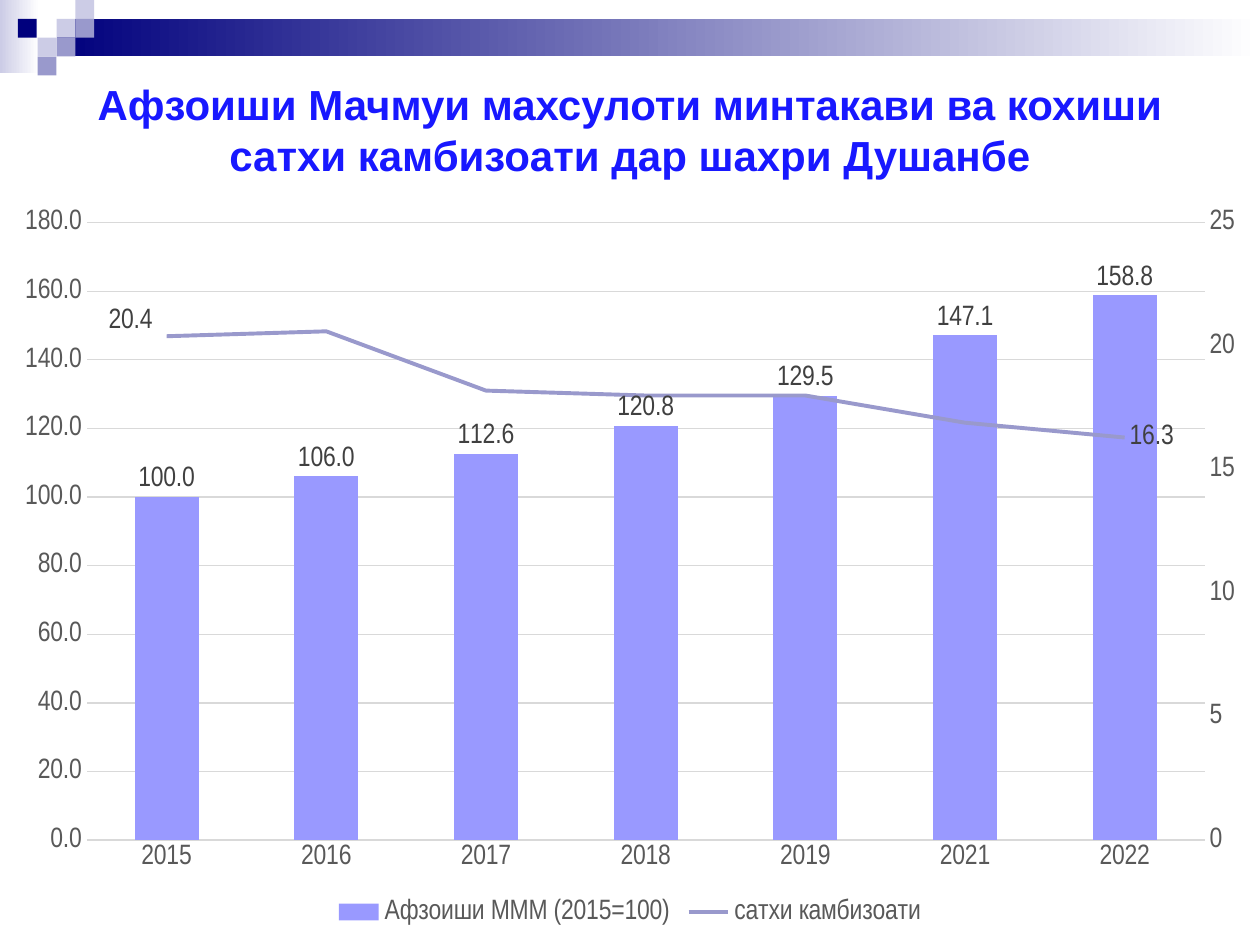
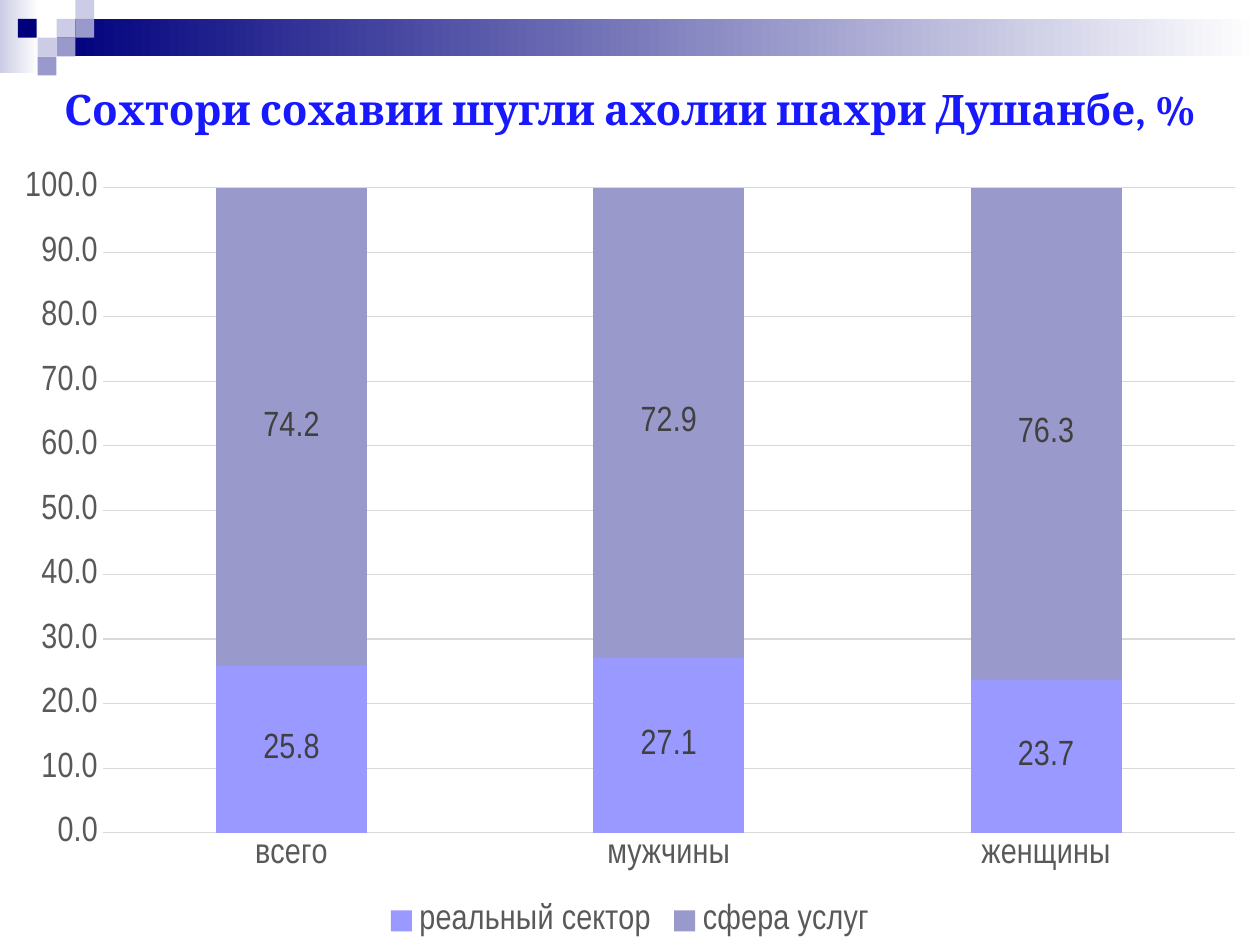
import copy

import pptx
import pptx.chart.axis
import pptx.chart.data
import pptx.dml.color
import pptx.enum.chart
import pptx.enum.shapes
import pptx.enum.text
import pptx.oxml
import pptx.oxml.ns
import pptx.util

Cm = pptx.util.Cm
Pt = pptx.util.Pt
qn = pptx.oxml.ns.qn
ChartType = pptx.enum.chart.XL_CHART_TYPE
LabelPosition = pptx.enum.chart.XL_LABEL_POSITION

COLOURS = {
    "navy": "00007D", "mist": "CCCCE6", "lilac": "9999CC", "violet": "9999FF",
    "white": "FFFFFF", "title": "1818FF", "grid": "D9D9D9",
    "axis": "595959", "label": "404040",
}
CHART_FONT = "Arial Narrow"
SLIDE_WIDTH = 25.4
TILE = 0.38
# Left, top and colour of the small squares, counted in tiles
TILES = [
    (3, 1, "mist"), (4, 0, "mist"), (4, 1, "lilac"), (2, 2, "mist"),
    (0.95, 1, "navy"), (3, 2, "lilac"), (2, 3, "lilac"),
]


def rgb(name):
    return pptx.dml.color.RGBColor.from_string(COLOURS[name])


class Deck:
    def __init__(self):
        self.prs = pptx.Presentation()
        self.prs.slide_width = Cm(SLIDE_WIDTH)
        self.prs.slide_height = Cm(19.05)
        self.slide = None

    def new_slide(self):
        self.slide = self.prs.slides.add_slide(self.prs.slide_layouts[6])
        # Faded bands, then the checkered corner
        self.rect(0, 0, 0.79, 1.47, "mist", "white")
        self.rect(3 * TILE, TILE, SLIDE_WIDTH - 3 * TILE, 2 * TILE, "navy", "white")
        for column, row, colour in TILES:
            self.rect(column * TILE, row * TILE, TILE, TILE, colour)

    def rect(self, left, top, width, height, colour, fade_to=None):
        block = self.slide.shapes.add_shape(
            pptx.enum.shapes.MSO_SHAPE.RECTANGLE,
            Cm(left), Cm(top), Cm(width), Cm(height))
        block.shadow.inherit = False
        block.line.fill.background()
        if fade_to:
            block.fill.gradient()
            block.fill.gradient_angle = 0
            for stop, name in zip(block.fill.gradient_stops, (colour, fade_to)):
                stop.color.rgb = rgb(name)
        else:
            block.fill.solid()
            block.fill.fore_color.rgb = rgb(colour)

    def title(self, text, left, width, height, font):
        frame = self.slide.shapes.add_textbox(
            Cm(left), Cm(1.27), Cm(width), Cm(height)).text_frame
        frame.word_wrap = True
        frame.vertical_anchor = pptx.enum.text.MSO_ANCHOR.MIDDLE
        heading = frame.paragraphs[0]
        heading.alignment = pptx.enum.text.PP_ALIGN.CENTER
        run = heading.add_run()
        run.text = text
        run.font.bold = True
        self.style_font(run.font, 24, "title", font)

    def style_font(self, font, size, colour, name=CHART_FONT):
        font.name = name
        font.size = Pt(size)
        font.color.rgb = rgb(colour)

    def style_line(self, line, colour, width):
        line.color.rgb = rgb(colour)
        line.width = Pt(width)

    def chart(self, kind, top, height, size, categories, series, maximum, step):
        data = pptx.chart.data.CategoryChartData(number_format="General")
        data.categories = categories
        for name, values in series.items():
            data.add_series(name, values)
        chart = self.slide.shapes.add_chart(
            kind, Cm(0), Cm(top), Cm(SLIDE_WIDTH), Cm(height), data).chart
        chart.has_title = False
        self.style_font(chart.font, size, "axis")
        chart.has_legend = True
        chart.legend.position = pptx.enum.chart.XL_LEGEND_POSITION.BOTTOM
        chart.legend.include_in_layout = False
        self.style_font(chart.legend.font, size, "axis")
        # Axes
        for axis in (chart.category_axis, chart.value_axis):
            axis.major_tick_mark = pptx.enum.chart.XL_TICK_MARK.NONE
            axis.minor_tick_mark = pptx.enum.chart.XL_TICK_MARK.NONE
            self.style_font(axis.tick_labels.font, size, "axis")
        self.style_line(chart.category_axis.format.line, "grid", 0.75)
        scale = chart.value_axis
        scale.format.line.fill.background()
        self.style_line(scale.major_gridlines.format.line, "grid", 0.75)
        scale.minimum_scale, scale.maximum_scale, scale.major_unit = 0, maximum, step
        scale.tick_labels.number_format = "0.0"
        scale.tick_labels.number_format_is_linked = False
        chart.plots[0].gap_width = 150
        chart.plots[0].vary_by_categories = False
        return chart

    def columns(self, series, colour, size, position):
        series.format.fill.solid()
        series.format.fill.fore_color.rgb = rgb(colour)
        labels = series.data_labels
        labels.show_value = True
        labels.number_format = "0.0"
        labels.number_format_is_linked = False
        labels.position = position
        self.style_font(labels.font, size, "label")

    def move_to_right_axis(self, chart, maximum, step):
        """Turn the last column series into a line on a second value axis."""
        bars = chart.plots[0]._element
        series = bars.findall(qn("c:ser"))[-1]
        for column_only in series.findall(qn("c:invertIfNegative")):
            series.remove(column_only)
        ids = {axis_id.get("val"): str(9001 + i)
               for i, axis_id in enumerate(bars.findall(qn("c:axId")))}
        line_plot = pptx.oxml.parse_xml(
            f'<c:lineChart {pptx.oxml.ns.nsdecls("c")}>'
            '<c:grouping val="standard"/><c:varyColors val="0"/><c:marker val="1"/>'
            + "".join(f'<c:axId val="{new}"/>' for new in ids.values())
            + "</c:lineChart>")
        line_plot.insert(2, series)
        bars.addnext(line_plot)

        # Second pair of axes: values on the right, categories hidden
        left_axis = chart.value_axis._element
        right_axis = copy.deepcopy(left_axis)
        hidden_axis = copy.deepcopy(chart.category_axis._element)
        for axis in (right_axis, hidden_axis):
            for tag in ("c:axId", "c:crossAx"):
                link = axis.find(qn(tag))
                link.set("val", ids[link.get("val")])
        hidden_axis.find(qn("c:delete")).set("val", "1")
        right_axis.find(qn("c:axPos")).set("val", "r")
        right_axis.find(qn("c:crosses")).set("val", "max")
        left_axis.addnext(right_axis)
        right_axis.addnext(hidden_axis)
        scale = pptx.chart.axis.ValueAxis(right_axis)
        scale.has_major_gridlines = False
        scale.maximum_scale, scale.major_unit = maximum, step
        scale.tick_labels.number_format = "General"
        return chart.plots[1].series[0]

    def line(self, series, colour, size, labelled):
        series.smooth = False
        series.marker.style = pptx.enum.chart.XL_MARKER_STYLE.NONE
        self.style_line(series.format.line, colour, 2.25)
        series.data_labels.show_value = False
        for index, shift in labelled.items():
            label = series.points[index].data_label
            self.style_font(label.font, size, "label")
            label.position = LabelPosition.RIGHT
            if shift:
                layout = pptx.oxml.parse_xml(
                    f'<c:layout {pptx.oxml.ns.nsdecls("c")}><c:manualLayout>'
                    f'<c:x val="{shift[0]}"/><c:y val="{shift[1]}"/>'
                    "</c:manualLayout></c:layout>")
                labels = series.data_labels._element
                labels.find(qn("c:dLbl")).find(qn("c:idx")).addnext(layout)


def main():
    deck = Deck()

    # Regional product and poverty level
    deck.new_slide()
    deck.title("Афзоиши Мачмуи махсулоти минтакави ва кохиши сатхи камбизоати "
               "дар шахри Душанбе", 1.27, 22.86, 2.67, "Arial")
    growth = deck.chart(
        ChartType.COLUMN_CLUSTERED, 3.94, 14.81, 16,
        ["2015", "2016", "2017", "2018", "2019", "2021", "2022"],
        {"Афзоиши МММ (2015=100)": [100, 106, 112.6, 120.8, 129.5, 147.1, 158.8],
         "сатхи камбизоати": [20.4, 20.6, 18.2, 18, 18, 16.9, 16.3]},
        180, 20)
    poverty = deck.move_to_right_axis(growth, 25, 5)
    deck.columns(growth.plots[0].series[0], "violet", 16, LabelPosition.OUTSIDE_END)
    deck.line(poverty, "lilac", 16, {0: (-0.05, -0.02), 6: None})

    # Employment by sector
    deck.new_slide()
    deck.title("Сохтори сохавии шугли ахолии шахри Душанбе, %",
               0, SLIDE_WIDTH, 1.85, "Cambria")
    employment = deck.chart(
        ChartType.COLUMN_STACKED, 3.12, 15.93, 20,
        ["всего", "мужчины", "женщины"],
        {"реальный сектор": [25.8, 27.1, 23.7],
         "сфера услуг": [74.2, 72.9, 76.3]},
        100, 10)
    employment.plots[0].overlap = 100
    for sector, colour in zip(employment.plots[0].series, ("violet", "lilac")):
        deck.columns(sector, colour, 20, LabelPosition.CENTER)

    deck.prs.save("out.pptx")


if __name__ == "__main__":
    main()
